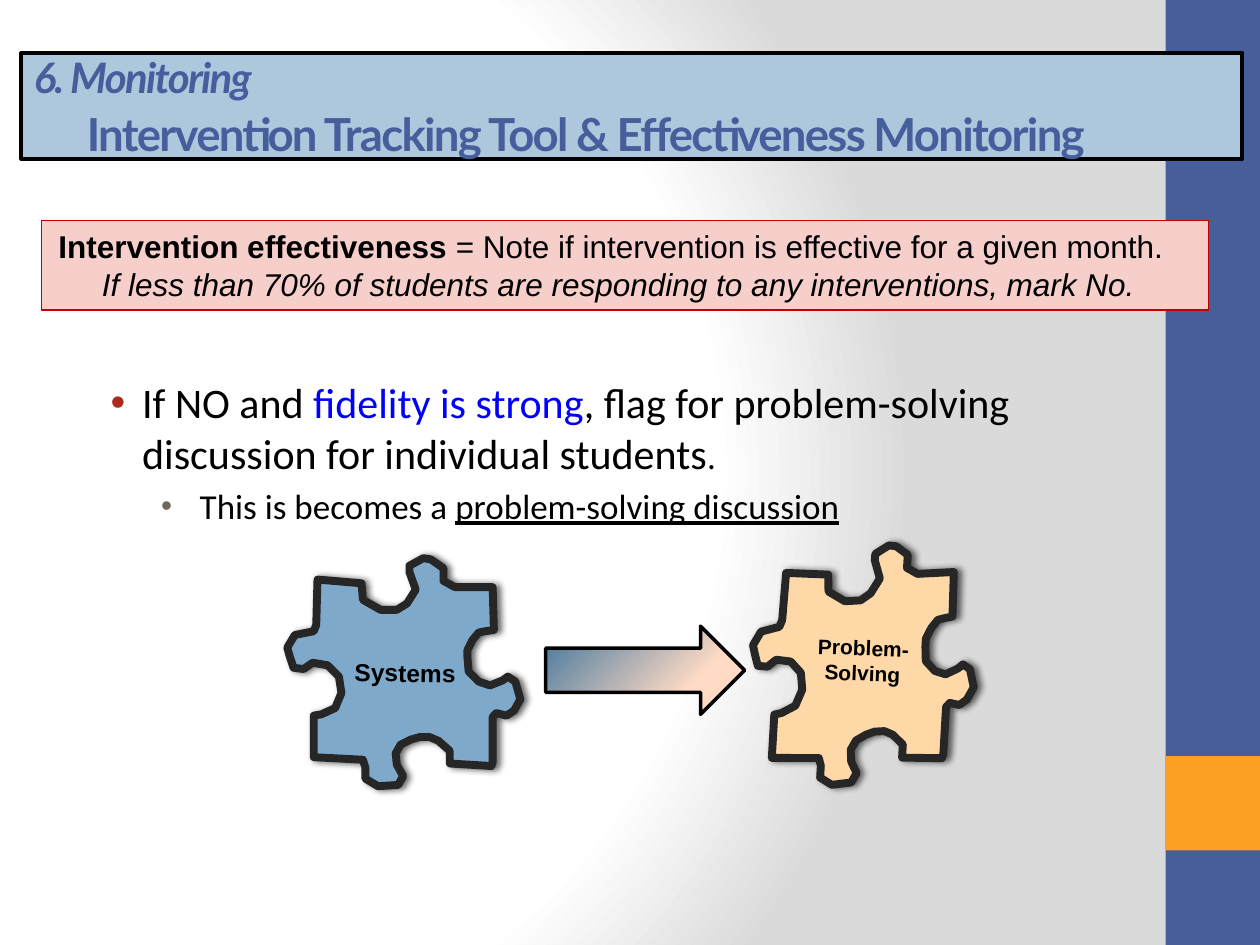
from dataclasses import dataclass

from lxml import etree
from pptx import Presentation
from pptx.dml.color import RGBColor
from pptx.enum.shapes import MSO_SHAPE
from pptx.enum.text import MSO_ANCHOR, PP_ALIGN
from pptx.oxml import parse_xml
from pptx.oxml.ns import qn
from pptx.util import Inches, Pt

RECTANGLE, RIGHT_ARROW = MSO_SHAPE.RECTANGLE, MSO_SHAPE.RIGHT_ARROW
LEFT, CENTER = PP_ALIGN.LEFT, PP_ALIGN.CENTER
TOP, MIDDLE = MSO_ANCHOR.TOP, MSO_ANCHOR.MIDDLE
NAMESPACE = "http://schemas.openxmlformats.org/drawingml/2006/main"


@dataclass(frozen=True)
class Theme:
    black: str = "000000"
    navy: str = "465E9C"
    amber: str = "FDA023"
    title_fill: str = "ADC8DD"
    note_fill: str = "F6CECA"
    note_line: str = "C00000"
    highlight: str = "0000FF"
    bullet: str = "AA2B1E"
    sub_bullet: str = "71685C"
    systems: str = "7EA9CA"
    solving: str = "FED9A7"
    outline: str = "262626"
    backdrop: tuple = ((0, "FFFFFF"), (75, "FFFFFF"), (100, "DADADA"))
    arrow: tuple = ((0, "40749B"), (72, "FFDBC5"), (95, "FEDBC6"), (100, "FEDCCA"))
    title_font: str = "Lato"
    body_font: str = "Calibri"
    label_font: str = "Arial"
    title_size: int = 26
    large: int = 24
    medium: int = 20
    note_size: int = 18
    label_size: int = 14
    small_label: int = 12


THEME = Theme()

# Outline of a puzzle piece, in inches from its upper right corner
PIECE = [
    (0, 0), (.01, .34), (-.06, .35), (-.11, .36), (-.16, .42), (-.2, .5),
    (-.2, .56), (-.19, .67), (-.11, .75), (-.02, .78), (.08, .74), (.12, .71),
    (.18, .75), (.22, .89), (.17, .98), (.11, 1.02), (.03, 1), (0, 1.03),
    (0, 1.39), (-.01, 1.42), (-.34, 1.4), (-.34, 1.3), (-.43, 1.22),
    (-.5, 1.19), (-.58, 1.19), (-.65, 1.21), (-.73, 1.25), (-.77, 1.32),
    (-.76, 1.41), (-.71, 1.5), (-.75, 1.57), (-.91, 1.58), (-1.01, 1.52),
    (-1.01, 1.43), (-1.03, 1.37), (-1.42, 1.35), (-1.42, 1.02), (-1.36, 1.01),
    (-1.25, .96), (-1.2, .84), (-1.22, .71), (-1.31, .62), (-1.43, .6),
    (-1.5, .65), (-1.58, .64), (-1.61, .55), (-1.63, .48), (-1.57, .38),
    (-1.42, .35), (-1.4, .3), (-1.39, -.06), (-1.04, -.03), (-1.03, .1),
    (-.89, .18), (-.76, .18), (-.68, .13), (-.61, .02), (-.66, -.12),
    (-.66, -.17), (-.55, -.23), (-.49, -.22), (-.39, -.15), (-.39, -.05), (-.3, 0),
]


def rgb(color):
    return RGBColor.from_string(color)


def gradient(stops, direction):
    marks = "".join(
        f'<a:gs pos="{place * 1000}"><a:srgbClr val="{color}"/></a:gs>' for place, color in stops)
    return parse_xml(f'<a:gradFill xmlns:a="{NAMESPACE}" rotWithShape="1">'
                     f'<a:gsLst>{marks}</a:gsLst>{direction}</a:gradFill>')


def set_gradient(fill, parent, stops, direction):
    fill.gradient()
    old = parent.find(qn("a:gradFill"))
    parent.replace(old, gradient(stops, direction))


def style(shape, fill=None, line=None, width=1):
    shape.shadow.inherit = False
    if fill:
        shape.fill.solid()
        shape.fill.fore_color.rgb = rgb(fill)
    if line:
        shape.line.color.rgb = rgb(line)
        shape.line.width = Pt(width)
    else:
        shape.line.fill.background()


def add_shape(shapes, kind, bounds, **look):
    shape = shapes.add_shape(kind, *map(Inches, bounds))
    style(shape, **look)
    return shape


def add_box(shapes, bounds, rotation=0):
    box = shapes.add_textbox(*map(Inches, bounds))
    box.rotation = rotation
    return box


def set_frame(box, anchor=TOP, top=0.05, right=0.1):
    frame = box.text_frame
    frame.word_wrap = True
    frame.vertical_anchor = anchor
    frame.margin_left, frame.margin_right = Inches(0.1), Inches(right)
    frame.margin_top, frame.margin_bottom = Inches(top), Inches(0.05)


def add_text(box, text, first=False, font=THEME.label_font, size=THEME.note_size,
             color=THEME.black, align=LEFT, before=0, left=0, hanging=0, bullet=None, **format):
    """Add one paragraph; text is a string or a list of (string, format) spans."""
    frame = box.text_frame
    para = frame.paragraphs[0] if first else frame.add_paragraph()
    para.alignment, para.space_before = align, Pt(before)
    properties = para._p.get_or_add_pPr()
    properties.set("marL", str(Inches(left)))
    properties.set("indent", str(-Inches(hanging)))
    if bullet:
        mark = etree.SubElement(properties, qn("a:buClr"))
        etree.SubElement(mark, qn("a:srgbClr"), val=bullet)
        etree.SubElement(properties, qn("a:buFont"), typeface="Arial")
        etree.SubElement(properties, qn("a:buChar"), char="•")
    base = dict(font=font, size=size, color=color, **format)
    for words, changes in [(text, {})] if isinstance(text, str) else text:
        look = {**base, **changes}
        span = para.add_run()
        span.text = words
        span.font.name, span.font.size = look["font"], Pt(look["size"])
        span.font.color.rgb = rgb(look["color"])
        span.font.bold = look.get("bold", False)
        span.font.italic = look.get("italic", False)
        span.font.underline = look.get("underline", False)
        if "spacing" in look:
            span._r.get_or_add_rPr().set("spc", str(look["spacing"] * 100))


def add_backdrop(page):
    fill = page.background.fill
    fill.solid()
    set_gradient(fill, page._element.cSld.find(qn("p:bg")).find(qn("p:bgPr")), THEME.backdrop,
                 '<a:path path="circle"><a:fillToRect l="20000" t="50000" '
                 'r="100000" b="50000"/></a:path>')


def add_side_bar(page, left, top, width, height):
    add_shape(page.shapes, RECTANGLE, (left, top, width, height), fill=THEME.navy)
    add_shape(page.shapes, RECTANGLE, (left, top + 0.8 * height, width, width), fill=THEME.amber)


def add_title(page, bounds):
    box = add_shape(page.shapes, RECTANGLE, bounds, fill=THEME.title_fill,
                    line=THEME.black, width=2.25)
    set_frame(box, anchor=MIDDLE)
    look = dict(font=THEME.title_font, color=THEME.navy, bold=True, spacing=-1)
    add_text(box, "6. Monitoring", first=True, size=THEME.large, italic=True, **look)
    add_text(box, "Intervention Tracking Tool & Effectiveness Monitoring",
             size=THEME.title_size, left=0.42, before=2, **look)


def add_note(page, bounds):
    box = add_shape(page.shapes, RECTANGLE, bounds, fill=THEME.note_fill,
                    line=THEME.note_line, width=0.75)
    set_frame(box, right=0.32)
    add_text(box, [("Intervention effectiveness", dict(bold=True)),
                   (" = Note if intervention is effective for a given month.", {})],
             first=True, align=CENTER)
    add_text(box, "If less than 70% of students are responding to any interventions, mark No.",
             align=CENTER, left=0.12, italic=True)


def add_body(page, bounds):
    box = add_box(page.shapes, bounds)
    set_frame(box, top=0.53)
    add_text(box, [("If NO and ", {}), ("fidelity is strong", dict(color=THEME.highlight)),
                   (", flag for problem-solving discussion for individual students", {}),
                   (".", dict(size=THEME.medium))],
             first=True, font=THEME.body_font, size=THEME.large,
             left=0.7, hanging=0.25, bullet=THEME.bullet)
    add_text(box, [(" ", dict(size=THEME.note_size)), ("This is becomes a ", {}),
                   ("problem-solving discussion", dict(underline=True))],
             font=THEME.body_font, size=THEME.medium, before=4,
             left=1.1, hanging=0.25, bullet=THEME.sub_bullet)


def add_piece(page, corner, fill, label, label_bounds, size, rotation, across=(1, 0), down=(0, 1)):
    """Draw a piece whose axes are the vectors across and down, and its label."""
    group = page.shapes.add_group_shape()
    points = [tuple(Inches(corner[axis] + x * across[axis] + y * down[axis]) for axis in (0, 1))
              for x, y in PIECE]
    builder = group.shapes.build_freeform(*points[0])
    builder.add_line_segments(points[1:], close=True)
    piece = builder.convert_to_shape()
    style(piece, fill=fill, line=THEME.outline, width=4.5)
    etree.SubElement(piece.line._get_or_add_ln(), qn("a:round"))
    effects = piece._element.spPr.find(qn("a:effectLst"))
    shadow = etree.SubElement(effects, qn("a:outerShdw"), blurRad=str(Pt(4)),
                              dist=str(Pt(2)), dir="0")
    color = etree.SubElement(shadow, qn("a:srgbClr"), val=THEME.black)
    etree.SubElement(color, qn("a:alpha"), val="60000")
    box = add_box(group.shapes, label_bounds, rotation)
    set_frame(box)
    add_text(box, label, first=True, size=size, align=CENTER, bold=True)


def add_arrow(page, bounds):
    arrow = add_shape(page.shapes, RIGHT_ARROW, bounds, line=THEME.black, width=2)
    set_gradient(arrow.fill, arrow._element.spPr, THEME.arrow,
                 '<a:lin ang="2700000" scaled="0"/>')


def main():
    deck = Presentation()
    deck.slide_width, deck.slide_height = Inches(10), Inches(7.5)
    page = deck.slides.add_slide(deck.slide_layouts[6])
    add_backdrop(page)
    add_side_bar(page, 9.25, 0, 0.75, 7.5)
    add_body(page, (0.33, 2.46, 8.25, 2.21))
    add_note(page, (0.33, 1.75, 9.26, 0.71))
    # Two pieces joined by an arrow
    add_piece(page, (7.57, 4.54), THEME.solving, "Problem-Solving", (6.35, 4.99, 1, 0.47),
              THEME.small_label, 2.3, across=(0.96, -0.05), down=(-0.06, 1.04))
    add_piece(page, (3.91, 4.66), THEME.systems, "Systems", (2.67, 5.17, 1.09, 0.34),
              THEME.label_size, 0.8)
    add_arrow(page, (4.33, 4.97, 1.58, 0.7))
    add_title(page, (0.17, 0.42, 9.69, 0.84))
    deck.save("out.pptx")


if __name__ == "__main__":
    main()
